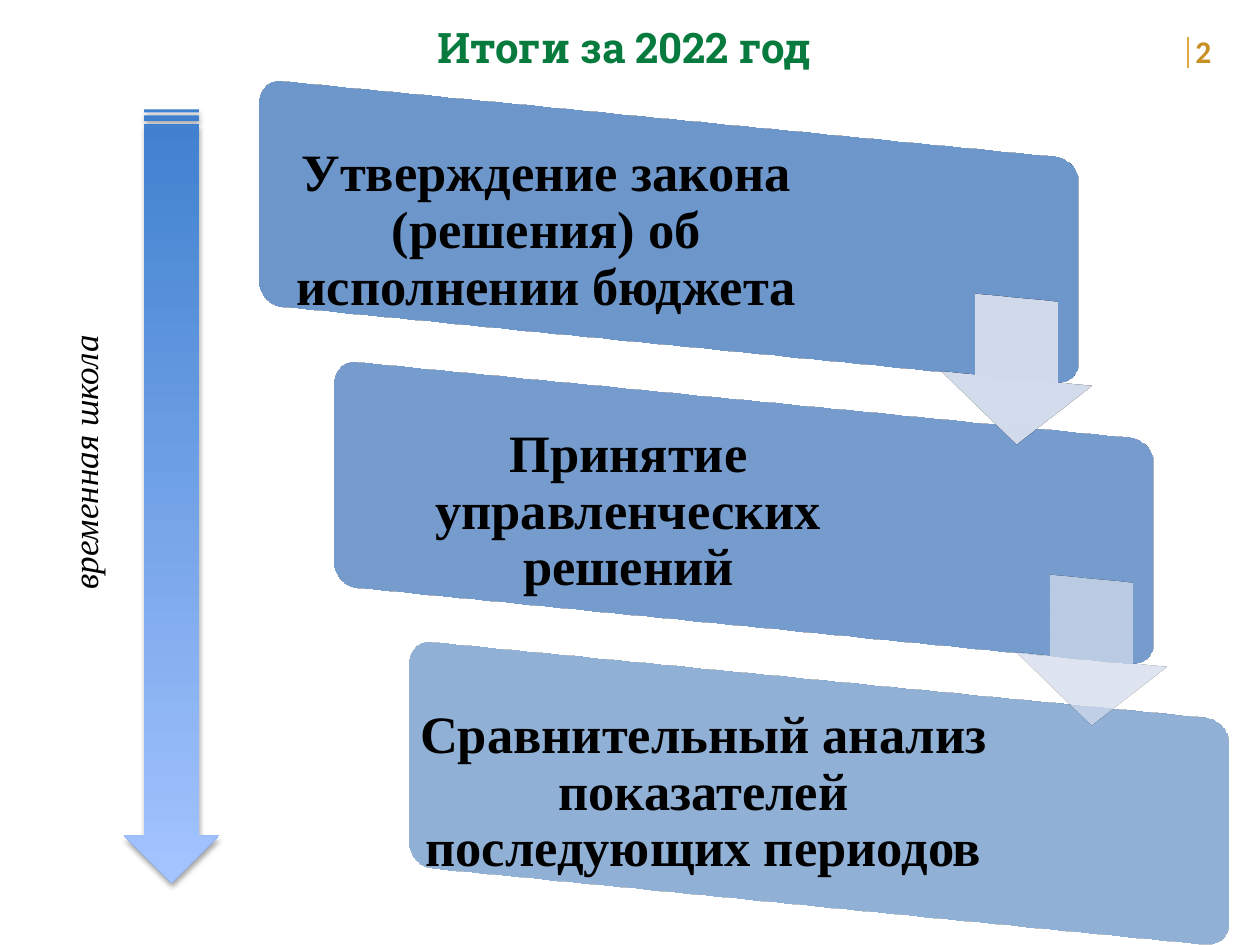
from dataclasses import dataclass

from lxml.etree import SubElement
from pptx import Presentation
from pptx.dml.color import RGBColor
from pptx.enum.shapes import MSO_CONNECTOR, MSO_SHAPE
from pptx.enum.text import MSO_ANCHOR, PP_ALIGN
from pptx.oxml.ns import qn
from pptx.util import Pt


@dataclass(frozen=True)
class Theme:
    """Colours, fonts and type sizes of the slide."""
    title: str = "077A3E"
    page: str = "C79023"
    rule: str = "DEAA46"
    text: str = "000000"
    step: str = "4F81BD"
    arrow: str = "D0D8E8"
    scale_top: str = "3F80CE"
    scale_bottom: str = "A4C4FF"
    title_font: str = "Roboto Slab"
    page_font: str = "Calibri"
    body_font: str = "Times New Roman"
    title_size: int = 24
    page_size: int = 18
    step_size: int = 30
    scale_size: int = 20


THEME = Theme()
STEP_X, STEP_Y = 42.9, 160.5
STEPS = [
    ("Утверждение закона (решения) об исполнении бюджета", 338.5, 60),
    ("Принятие управленческих решений", 346.5, 55),
    ("Сравнительный анализ показателей последующих периодов", 346.5, 40),
]
ARROW_OPACITIES = [90, 50]


def rgb(value):
    """Turn a hex string into a colour."""
    return RGBColor.from_string(value)


def style(paragraph, font, size, color, bold=False, italic=False):
    """Set the font of a whole paragraph."""
    paragraph.font.name = font
    paragraph.font.size = Pt(size)
    paragraph.font.color.rgb = rgb(color)
    paragraph.font.bold = bold
    paragraph.font.italic = italic


def add_text(slide, text, box, align, anchor=MSO_ANCHOR.TOP, margin=None):
    """Add a wrapping text box and return its frame."""
    frame = slide.shapes.add_textbox(*map(Pt, box)).text_frame
    frame.word_wrap = True
    frame.vertical_anchor = anchor
    if margin is not None:
        frame.margin_left = frame.margin_right = Pt(margin)
        frame.margin_top = frame.margin_bottom = Pt(margin)
    frame.text = text
    frame.paragraphs[0].alignment = align
    return frame


def add_solid(slide, preset, box, adjustments, color, opacity):
    """Add a translucent bevelled shape turned to face left from above."""
    shape = slide.shapes.add_shape(preset, *map(Pt, box))
    for index, value in enumerate(adjustments):
        shape.adjustments[index] = value
    shape.shadow.inherit = False
    shape.line.fill.background()
    shape.fill.solid()
    shape.fill.fore_color.rgb = rgb(color)
    properties = shape._element.spPr
    tint = properties.find(qn("a:solidFill"))[0]
    SubElement(tint, qn("a:alpha")).set("val", str(opacity * 1000))
    scene = SubElement(properties, qn("a:scene3d"))
    camera = SubElement(scene, qn("a:camera"), prst="orthographicFront")
    SubElement(camera, qn("a:rot"), lat=str(20 * 60000), lon=str(16 * 60000), rev="0")
    SubElement(scene, qn("a:lightRig"), rig="threePt", dir="t")
    solid = SubElement(properties, qn("a:sp3d"), prstMaterial="plastic")
    SubElement(solid, qn("a:bevelT"), w="127000", h="25400")


def add_step(slide, index, text, text_width, opacity):
    """Draw one step with its wording."""
    left, top = 139 + index * STEP_X, 63.5 + index * STEP_Y
    add_solid(slide, MSO_SHAPE.ROUNDED_RECTANGLE, (left, top, 486.7, 137.5),
              [0.1], THEME.step, opacity)
    frame = add_text(slide, text, (left + 4, top + 4, text_width, 129.5),
                     PP_ALIGN.CENTER, MSO_ANCHOR.MIDDLE, 8.64)
    frame.paragraphs[0].line_spacing = 0.9
    style(frame.paragraphs[0], THEME.body_font, THEME.step_size, THEME.text, bold=True)


def add_time_scale(slide):
    """Draw the downward time arrow and its vertical label."""
    arrow = slide.shapes.add_shape(MSO_SHAPE.STRIPED_RIGHT_ARROW,
                                   Pt(-123), Pt(256.5), Pt(442), Pt(54))
    arrow.rotation = 90
    arrow.adjustments[0] = 0.58
    arrow.adjustments[1] = 0.5
    arrow.line.fill.background()
    arrow.fill.gradient()
    arrow.fill.gradient_angle = 0
    for stop, color in zip(arrow.fill.gradient_stops, (THEME.scale_top, THEME.scale_bottom)):
        stop.color.rgb = rgb(color)
    arrow.shadow.inherit = False
    effects = arrow._element.spPr.find(qn("a:effectLst"))
    shadow = SubElement(effects, qn("a:outerShdw"), blurRad=str(Pt(3.1)),
                        dist=str(Pt(1.8)), dir="5400000", rotWithShape="0")
    tint = SubElement(shadow, qn("a:srgbClr"), val=THEME.text)
    SubElement(tint, qn("a:alpha"), val="35000")

    label = add_text(slide, "временная школа", (32.5, 77, 39, 374.5), PP_ALIGN.CENTER)
    label._txBody.bodyPr.set("vert", "vert270")
    style(label.paragraphs[0], THEME.body_font, THEME.scale_size, THEME.text, italic=True)


def add_heading(slide):
    """Place the title, the page number and the rule beside it."""
    title = slide.shapes.title
    title.left, title.top, title.width, title.height = map(Pt, (59, 8.5, 591, 36))
    title.text_frame.text = "Итоги за 2022 год"
    title.text_frame.vertical_anchor = MSO_ANCHOR.MIDDLE
    heading = title.text_frame.paragraphs[0]
    heading.alignment = PP_ALIGN.CENTER
    heading._p.get_or_add_pPr().set("marL", str(Pt(4.5)))
    style(heading, THEME.title_font, THEME.title_size, THEME.title, bold=True)

    page = add_text(slide, "2", (676, 14.5, 44, 29), PP_ALIGN.LEFT)
    style(page.paragraphs[0], THEME.page_font, THEME.page_size, THEME.page, bold=True)

    rule = slide.shapes.add_connector(MSO_CONNECTOR.STRAIGHT, Pt(679), Pt(21), Pt(679), Pt(39))
    rule.line.color.rgb = rgb(THEME.rule)
    rule.line.width = Pt(1)
    SubElement(rule._element.spPr, qn("a:effectLst"))


def main():
    """Build the slide and save it."""
    deck = Presentation()
    deck.slide_width, deck.slide_height = Pt(720), Pt(540)
    slide = deck.slides.add_slide(deck.slide_layouts[5])
    add_heading(slide)
    for index, step in enumerate(STEPS):
        add_step(slide, index, *step)
    for index, opacity in enumerate(ARROW_OPACITIES):
        box = (536.4 + index * STEP_X, 167.5 + index * STEP_Y, 89.3, 89.3)
        add_solid(slide, MSO_SHAPE.DOWN_ARROW, box, [0.55, 0.45], THEME.arrow, opacity)
    add_time_scale(slide)
    deck.save("out.pptx")


if __name__ == "__main__":
    main()
